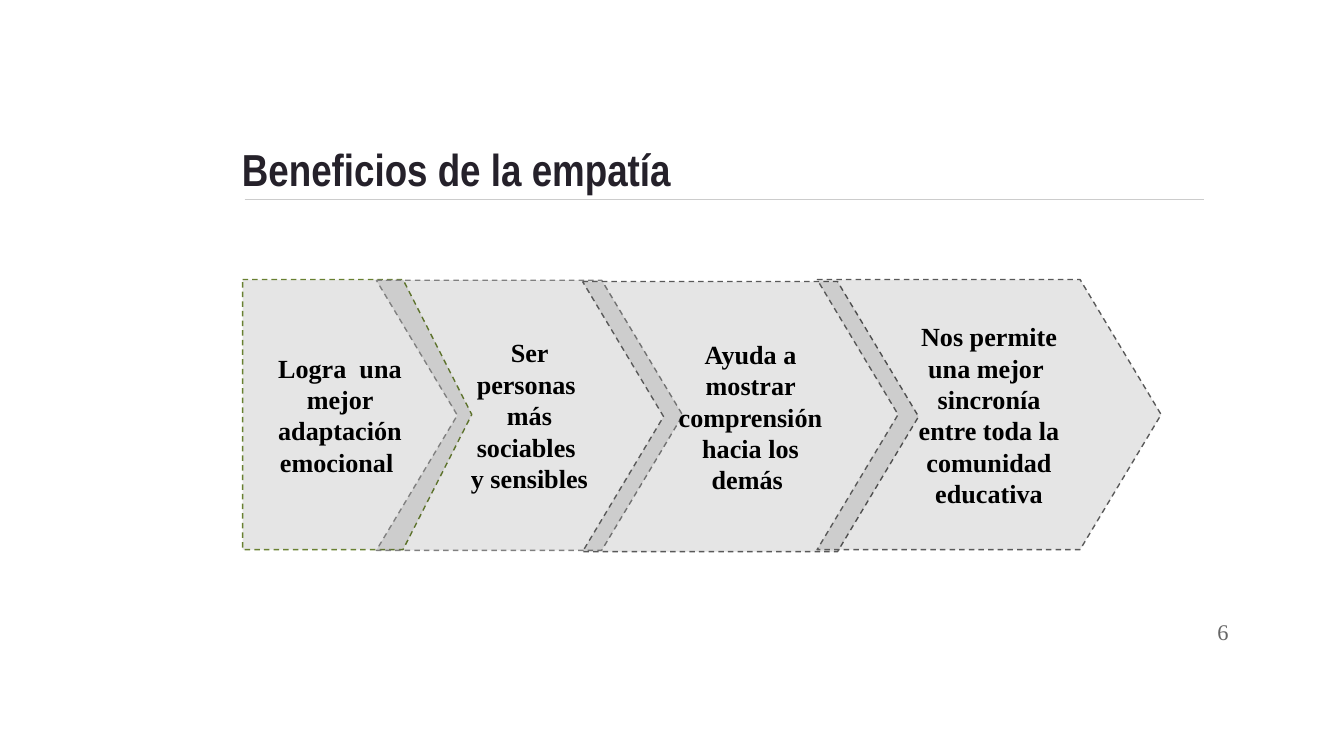
from typing import NamedTuple

from lxml import etree
from pptx import Presentation
from pptx import util as u
from pptx.dml.color import RGBColor
from pptx.enum import dml, shapes, text
from pptx.oxml.ns import qn

EMU_PER_PX = 4572  # 200 px to the inch
INSET = 20
STEP_HEIGHT = 402

BLACK = RGBColor(0x00, 0x00, 0x00)
INK = RGBColor(0x25, 0x21, 0x2A)
RULE_GREY = RGBColor(0xCC, 0xCC, 0xCC)
NUMBER_GREY = RGBColor(0x66, 0x66, 0x66)
OLIVE = RGBColor(0x68, 0x80, 0x31)
MID_GREY = RGBColor(0x80, 0x80, 0x80)
DARK_GREY = RGBColor(0x59, 0x59, 0x59)

TITLE_FONT = "Arial Narrow"
BODY_FONT = "Times New Roman"
PENTAGON = shapes.MSO_SHAPE.PENTAGON
CHEVRON = shapes.MSO_SHAPE.CHEVRON


class Step(NamedTuple):
    kind: shapes.MSO_SHAPE
    left: int
    top: int
    width: int
    outline: RGBColor
    wording: str


STEPS = [
    Step(PENTAGON, 361, 416, 341, OLIVE, "Logra  una mejor adaptación emocional "),
    Step(CHEVRON, 560, 417, 456, MID_GREY, "Ser personas  más sociables  y sensibles"),
    Step(CHEVRON, 867, 419, 500, DARK_GREY, "Ayuda a mostrar comprensión hacia los demás "),
    Step(CHEVRON, 1216, 416, 512, DARK_GREY,
         "Nos permite una mejor  sincronía entre toda la comunidad educativa"),
]


def px(length: int) -> u.Emu:
    return u.Emu(length * EMU_PER_PX)


def write(shape, wording: str, font: str, size: int, color: RGBColor, bold: bool,
          align: text.PP_ALIGN, anchor: text.MSO_ANCHOR) -> None:
    frame = shape.text_frame
    frame.text = wording
    frame.word_wrap = True
    frame.auto_size = text.MSO_AUTO_SIZE.NONE
    frame.vertical_anchor = anchor
    frame.margin_left = frame.margin_right = px(INSET)
    frame.margin_top = frame.margin_bottom = px(INSET)
    paragraph = frame.paragraphs[0]
    paragraph.alignment = align
    paragraph.font.name = font
    paragraph.font.size = u.Pt(size)
    paragraph.font.bold = bold
    paragraph.font.color.rgb = color


def add_rule(slide) -> None:
    rule = slide.shapes.add_connector(
        shapes.MSO_CONNECTOR.STRAIGHT, px(364), px(297), px(1792), px(297))
    rule.line.color.rgb = RULE_GREY
    rule.line.width = u.Pt(0.75)
    etree.SubElement(rule._element.spPr, qn("a:effectLst"))


def add_title(slide) -> None:
    title = slide.shapes.title
    title.left, title.top, title.width, title.height = map(px, (340, 157, 1448, 154))
    write(title, "Beneficios de la empatía", TITLE_FONT, 24, INK, True,
          text.PP_ALIGN.LEFT, text.MSO_ANCHOR.BOTTOM)


def add_step(slide, step: Step) -> None:
    """Draw one arrow of the chain; its fill is translucent so overlaps darken."""
    shape = slide.shapes.add_shape(
        step.kind, px(step.left), px(step.top), px(step.width), px(STEP_HEIGHT))
    shape.shadow.inherit = False
    shape.adjustments[0] = 0.3
    shape.fill.solid()
    shape.fill.fore_color.rgb = BLACK
    color = shape._element.spPr.find(qn("a:solidFill"))[0]
    etree.SubElement(color, qn("a:alpha"), val="10000")
    shape.line.color.rgb = step.outline
    shape.line.width = u.Pt(0.75)
    shape.line.dash_style = dml.MSO_LINE.DASH
    write(shape, step.wording, BODY_FONT, 14, BLACK, True,
          text.PP_ALIGN.CENTER, text.MSO_ANCHOR.MIDDLE)


def add_page_number(slide) -> None:
    box = slide.shapes.add_textbox(px(1728), px(897), px(120), px(86))
    write(box, "6", BODY_FONT, 12, NUMBER_GREY, False,
          text.PP_ALIGN.RIGHT, text.MSO_ANCHOR.MIDDLE)


def main() -> None:
    presentation = Presentation()
    presentation.slide_width, presentation.slide_height = px(2000), px(1125)
    slide = presentation.slides.add_slide(presentation.slide_layouts.get_by_name("Title Only"))
    add_rule(slide)
    add_title(slide)
    for step in STEPS:
        add_step(slide, step)
    add_page_number(slide)
    presentation.save("out.pptx")


if __name__ == "__main__":
    main()
